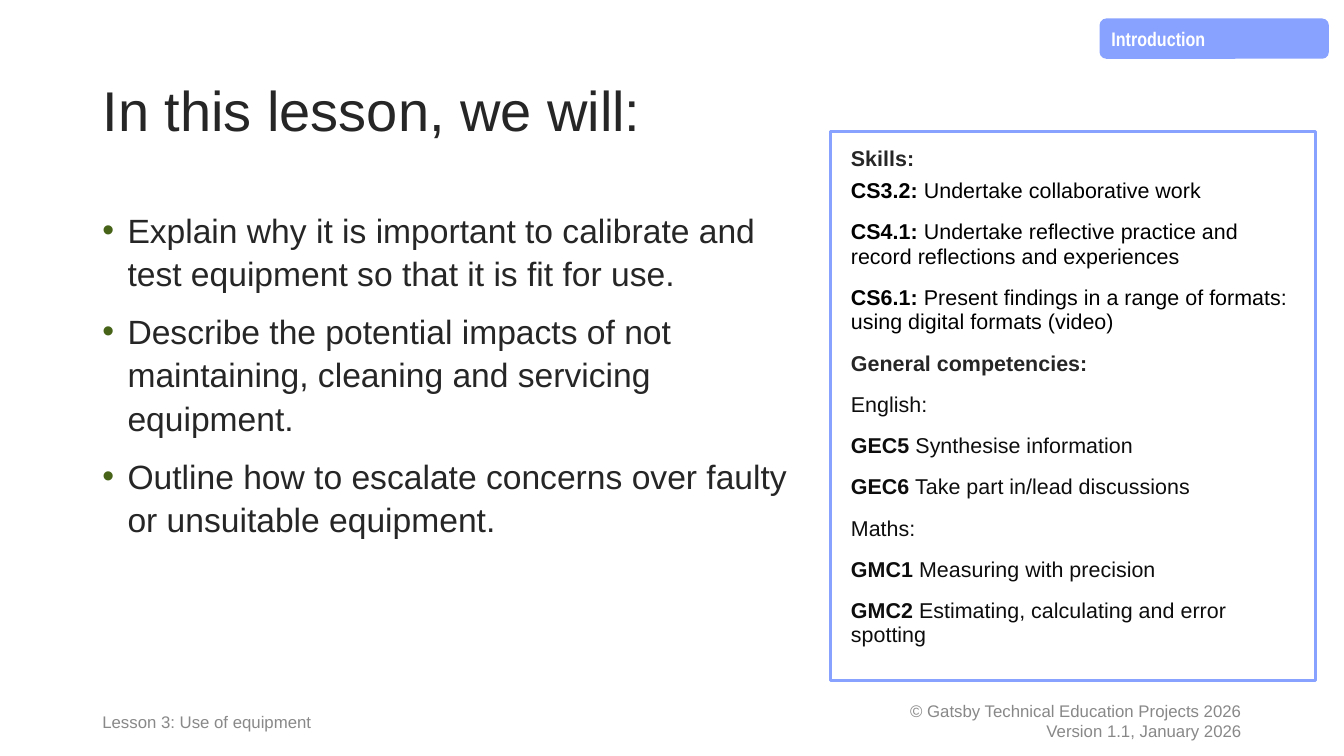
from dataclasses import dataclass

from lxml import etree
from pptx import Presentation
from pptx import util as u
from pptx.dml.color import RGBColor
from pptx.enum import shapes, text
from pptx.oxml import ns

# Grid: 160 columns by 90 rows over a 13.33 x 7.5 inch slide
WIDTH, HEIGHT = u.Inches(13.33), u.Inches(7.5)
COLUMNS, ROWS = 160, 90
MARGIN = 11
FOOTER_ROW, FOOTER_ROWS = 83.4, 4.8

INK, BLACK, SOFT_BLACK = "262626", "000000", "0D0D0D"
WHITE, PERIWINKLE, GREEN = "FFFFFF", "88A2FF", "466318"


@dataclass(frozen=True)
class Area:
    column: float
    row: float
    columns: float
    rows: float

    def bounds(self) -> tuple[int, int, int, int]:
        return (
            round(WIDTH * self.column / COLUMNS),
            round(HEIGHT * self.row / ROWS),
            round(WIDTH * self.columns / COLUMNS),
            round(HEIGHT * self.rows / ROWS),
        )


@dataclass(frozen=True)
class Entry:
    """A paragraph: a bold lead followed by plain words."""
    lead: str = ""
    words: str = ""
    color: str = INK
    before: float = 0
    spacing: float = 1.08


def rgb(color: str) -> RGBColor:
    return RGBColor.from_string(color)


def add_bullet(para, color: str) -> None:
    props = para._p.get_or_add_pPr()
    props.set("marL", str(u.Inches(0.25)))
    props.set("indent", str(-u.Inches(0.25)))
    shade = etree.SubElement(props, ns.qn("a:buClr"))
    etree.SubElement(shade, ns.qn("a:srgbClr"), val=color)
    etree.SubElement(props, ns.qn("a:buFont"), typeface="Arial")
    etree.SubElement(props, ns.qn("a:buChar"), char="•")


def write(box, entries: list[Entry], *, size: float, font: str = "Arial",
          align=text.PP_ALIGN.LEFT, anchor=text.MSO_ANCHOR.TOP,
          inset: tuple[float, float] = (0.1, 0.05), bullet: str = "") -> None:
    frame = box.text_frame
    frame.word_wrap = True
    frame.auto_size = text.MSO_AUTO_SIZE.NONE
    frame.vertical_anchor = anchor
    frame.margin_left = frame.margin_right = u.Inches(inset[0])
    frame.margin_top = frame.margin_bottom = u.Inches(inset[1])
    for index, entry in enumerate(entries):
        para = frame.add_paragraph() if index else frame.paragraphs[0]
        if bullet:
            add_bullet(para, bullet)
        para.alignment = align
        para.line_spacing = entry.spacing
        para.space_before = u.Pt(entry.before)
        for words, bold in ((entry.lead, True), (entry.words, False)):
            if words:
                span = para.add_run()
                span.text = words
                span.font.name, span.font.size = font, u.Pt(size)
                span.font.bold = bold
                span.font.color.rgb = rgb(entry.color)


def add_panel(page, kind, area: Area, *, fill: str, line: str = ""):
    panel = page.shapes.add_shape(kind, *area.bounds())
    panel.shadow.inherit = False
    panel.fill.solid()
    panel.fill.fore_color.rgb = rgb(fill)
    if line:
        panel.line.color.rgb = rgb(line)
        panel.line.width = u.Pt(2.25)
    else:
        panel.line.fill.background()
    return panel


def add_text(page, area: Area, entries: list[Entry], **style) -> None:
    write(page.shapes.add_textbox(*area.bounds()), entries, **style)


def skill(lead: str, words: str, color: str = BLACK, before: float = 12) -> Entry:
    return Entry(lead, words, color, before, 0.95)


AIMS = [
    "Explain why it is important to calibrate and test equipment so that it is fit for use.",
    "Describe the potential impacts of not maintaining, cleaning and servicing equipment.",
    "Outline how to escalate concerns over faulty or unsuitable equipment.",
]

SKILLS = [
    Entry("Skills:", spacing=0.88),
    skill("CS3.2: ", "Undertake collaborative work", before=6),
    skill("CS4.1: ", "Undertake reflective practice and record reflections and experiences"),
    skill("CS6.1: ", "Present findings in a range of formats: using digital formats (video)"),
    skill("General competencies:", "", INK),
    skill("", "English:", SOFT_BLACK),
    skill("GEC5", " Synthesise information", SOFT_BLACK),
    skill("GEC6", " Take part in/lead discussions", SOFT_BLACK),
    skill("", "Maths:", SOFT_BLACK),
    skill("GMC1", " Measuring with precision", SOFT_BLACK),
    skill("GMC2", " Estimating, calculating and error spotting", SOFT_BLACK),
]

COPYRIGHT = ["© Gatsby Technical Education Projects 2026", "Version 1.1, January 2026"]


def main() -> None:
    deck = Presentation()
    deck.slide_width, deck.slide_height = WIDTH, HEIGHT
    page = deck.slides.add_slide(deck.slide_layouts[5])
    middle = text.MSO_ANCHOR.MIDDLE

    # Title
    title = page.shapes.title
    title.left, title.top, title.width, title.height = Area(MARGIN, 4.8, 138, 17.4).bounds()
    write(title, [Entry(words="In this lesson, we will:", spacing=0.9)],
          size=40, anchor=middle)

    # Section tab
    tab = add_panel(page, shapes.MSO_SHAPE.FLOWCHART_ALTERNATE_PROCESS,
                    Area(130.9, 2.2, 27.3, 4.8), fill=PERIWINKLE)
    write(tab, [Entry("Introduction", color=WHITE)], size=14, font="Arial Narrow")

    # Lesson aims
    aims = [Entry(words=aim, before=10 if index else 0) for index, aim in enumerate(AIMS)]
    add_text(page, Area(MARGIN, 24, 84, 57.1), aims, size=24, bullet=GREEN)

    # Skills panel
    panel = add_panel(page, shapes.MSO_SHAPE.RECTANGLE, Area(98.9, 15.7, 57.7, 65.3),
                      fill=WHITE, line=PERIWINKLE)
    write(panel, SKILLS, size=15.3, inset=(0.2, 0.16))

    # Footer
    add_text(page, Area(MARGIN, FOOTER_ROW, 55.2, FOOTER_ROWS),
             [Entry(words="Lesson 3: Use of equipment", color="898989")],
             size=12, anchor=middle)
    add_text(page, Area(95, FOOTER_ROW, 54, FOOTER_ROWS),
             [Entry(words=line, color="888888", spacing=1.0) for line in COPYRIGHT],
             size=12, anchor=middle, align=text.PP_ALIGN.RIGHT)

    deck.save("out.pptx")


if __name__ == "__main__":
    main()
